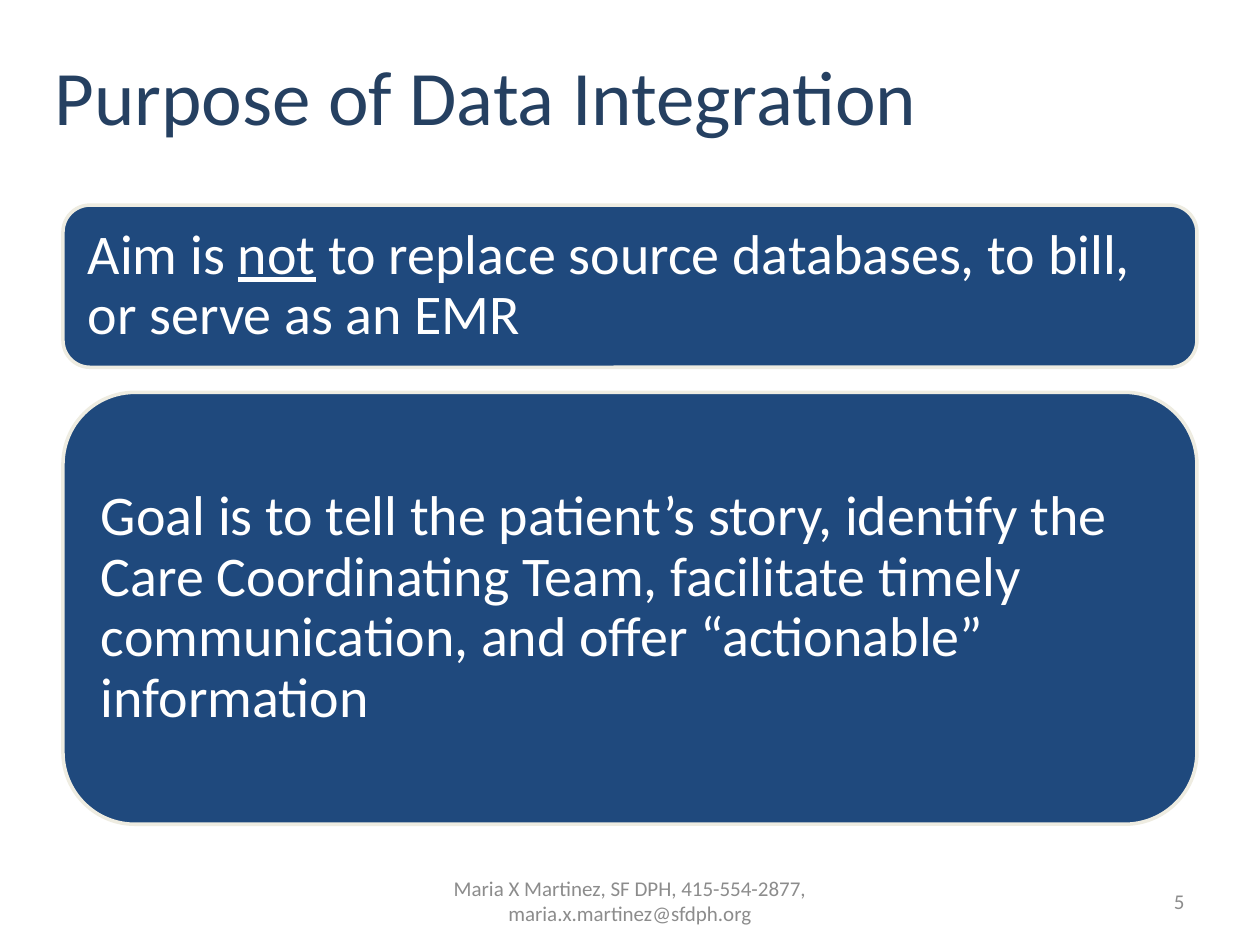
from pptx import Presentation
from pptx.dml.color import RGBColor
from pptx.enum.shapes import MSO_SHAPE
from pptx.enum.text import MSO_ANCHOR, PP_ALIGN
from pptx.util import Pt

COLORS = {"title": "254061", "panel": "1F497D", "border": "EEECE1",
          "panel_text": "FFFFFF", "footer": "8C8C8C"}


def format_runs(paragraph, size, color):
    for run in paragraph.runs:
        run.font.name = "Calibri"
        run.font.size = Pt(size)
        run.font.color.rgb = RGBColor.from_string(COLORS[color])


presentation = Presentation()
presentation.slide_width = Pt(720)
presentation.slide_height = Pt(540)
slide = presentation.slides.add_slide(presentation.slide_layouts[6])

# Title and footer: text, left, top, width, height, size, color, alignment
labels = [
    ("Purpose of Data Integration", 24, 24, 648, 60, 44, "title", PP_ALIGN.LEFT),
    ("5", 516, 500.5, 168, 28.75, 12, "footer", PP_ALIGN.RIGHT),
    ("Maria X Martinez, SF DPH, 415-554-2877, maria.x.martinez@sfdph.org",
     246, 500.5, 228, 28.75, 12, "footer", PP_ALIGN.CENTER),
]
for text, left, top, width, height, size, color, alignment in labels:
    box = slide.shapes.add_textbox(Pt(left), Pt(top), Pt(width), Pt(height))
    text_frame = box.text_frame
    text_frame.word_wrap = True
    text_frame.vertical_anchor = MSO_ANCHOR.MIDDLE
    text_frame.text = text
    paragraph = text_frame.paragraphs[0]
    paragraph.alignment = alignment
    format_runs(paragraph, size, color)

# Statement panels: top, height, runs as (text, underlined)
panels = [
    (117.2, 92.7, [
        ("Aim is ", False), ("not", True),
        (" to replace source databases, to bill, or serve as an EMR", False)]),
    (224.2, 246.8, [
        ("Goal is to tell the patient’s story, identify the Care Coordinating "
         "Team, facilitate timely communication, and offer “actionable” "
         "information", False)]),
]
for top, height, runs in panels:
    panel = slide.shapes.add_shape(
        MSO_SHAPE.ROUNDED_RECTANGLE, Pt(36), Pt(top), Pt(648), Pt(height))
    panel.shadow.inherit = False
    panel.fill.solid()
    panel.fill.fore_color.rgb = RGBColor.from_string(COLORS["panel"])
    panel.line.color.rgb = RGBColor.from_string(COLORS["border"])
    panel.line.width = Pt(2)
    text_frame = panel.text_frame
    text_frame.word_wrap = True
    text_frame.vertical_anchor = MSO_ANCHOR.MIDDLE
    text_frame.margin_left = text_frame.margin_right = Pt(9.6)
    text_frame.margin_top = text_frame.margin_bottom = Pt(9.6)
    paragraph = text_frame.paragraphs[0]
    paragraph.alignment = PP_ALIGN.LEFT
    paragraph.line_spacing = 0.9
    for text, underlined in runs:
        run = paragraph.add_run()
        run.text = text
        run.font.underline = underlined
    format_runs(paragraph, 32, "panel_text")

presentation.save("out.pptx")
